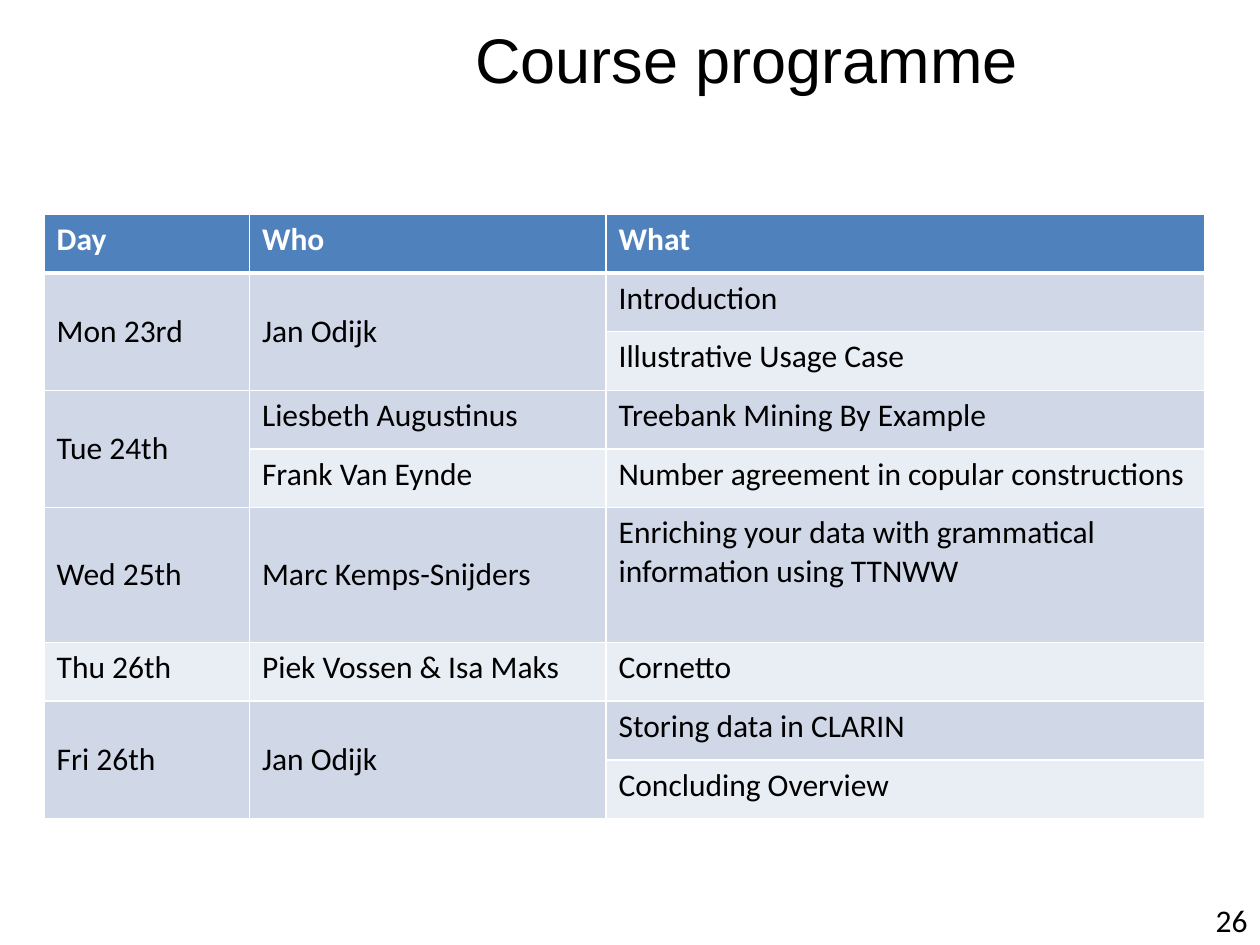
from dataclasses import dataclass

from lxml import etree
from pptx import Presentation
from pptx import util as u
from pptx.dml.color import RGBColor
from pptx.enum import text
from pptx.oxml import ns


@dataclass(frozen=True)
class Theme:
    ink: str = "000000"
    paper: str = "FFFFFF"
    header: str = "4F81BD"
    bands: tuple = ("E9EDF4", "D0D8E8")
    title_font: str = "Arial"
    body_font: str = "Calibri"
    title_size: int = 36
    body_size: int = 18
    rule: int = 1
    header_rule: int = 3


HEADINGS = ("Day", "Who", "What")
PROGRAMME = (
    ("Mon 23rd", "Jan Odijk", "Introduction"),
    (None, None, "Illustrative Usage Case"),
    ("Tue 24th", "Liesbeth Augustinus", "Treebank Mining By Example"),
    (None, "Frank Van Eynde", "Number agreement in copular constructions"),
    ("Wed 25th", "Marc Kemps-Snijders",
     "Enriching your data with grammatical information using TTNWW"),
    ("Thu 26th", "Piek Vossen & Isa Maks", "Cornetto"),
    ("Fri 26th", "Jan Odijk", "Storing data in CLARIN"),
    (None, None, "Concluding Overview"),
)
WEDNESDAY = 5
MIDDLE = text.MSO_ANCHOR.MIDDLE


class Deck:
    COLUMNS, ROWS = 100, 75

    def __init__(self, theme):
        self.theme = theme
        self.prs = Presentation()
        self.prs.slide_width, self.prs.slide_height = u.Inches(10), u.Inches(7.5)
        self.s = self.prs.slides.add_slide(self.prs.slide_layouts[6])

    def x(self, columns):
        return round(self.prs.slide_width * columns / self.COLUMNS)

    def y(self, rows):
        return round(self.prs.slide_height * rows / self.ROWS)

    def box(self, left, top, width, height):
        return self.x(left), self.y(top), self.x(width), self.y(height)

    def font(self, p, name, size, color, bold=False):
        p.font.name, p.font.size, p.font.bold = name, u.Pt(size), bold
        p.font.color.rgb = RGBColor.from_string(color)

    def label(self, words, area, name, size, align, anchor=text.MSO_ANCHOR.TOP):
        tf = self.s.shapes.add_textbox(*self.box(*area)).text_frame
        tf.word_wrap, tf.vertical_anchor = True, anchor
        p = tf.paragraphs[0]
        p.text, p.alignment = words, align
        self.font(p, name, size, self.theme.ink)

    def borders(self, cell, **widths):
        tc_pr = cell._tc.get_or_add_tcPr()
        for side in "LRTB":
            width = u.Pt(widths.get(side, self.theme.rule))
            ln = etree.SubElement(tc_pr, ns.qn(f"a:ln{side}"), w=str(width))
            fill = etree.SubElement(ln, ns.qn("a:solidFill"))
            etree.SubElement(fill, ns.qn("a:srgbClr"), val=self.theme.paper)

    def cell(self, cell, words, row):
        t = self.theme
        head = row == 0
        edge = {0: {"B": t.header_rule}, 1: {"T": t.header_rule}}.get(row, {})
        self.borders(cell, **edge)
        cell.fill.solid()
        cell.fill.fore_color.rgb = RGBColor.from_string(
            t.header if head else t.bands[row % 2])
        p = cell.text_frame.paragraphs[0]
        p.text = words or ""
        self.font(p, t.body_font, t.body_size, t.paper if head else t.ink, head)

    def table(self, rows, area, widths, heights):
        frame = self.s.shapes.add_table(len(rows), len(widths), *self.box(*area))
        table = frame.table
        for column, width in zip(table.columns, widths):
            column.width = self.x(width)
        for row, height in zip(table.rows, heights):
            row.height = self.y(height)
        for i, row in enumerate(rows):
            for j, words in enumerate(row):
                self.cell(table.cell(i, j), words, i)
                if words is None:
                    origin = table.cell(i - 1, j)
                    origin.merge(table.cell(i, j))
                    origin.vertical_anchor = MIDDLE
        return table


def main():
    theme = Theme()
    deck = Deck(theme)
    deck.label("Course programme", (18.5, 0, 81.5, 9.2), theme.title_font,
               theme.title_size, text.PP_ALIGN.CENTER, MIDDLE)
    deck.label("26", (89.4, 71, 10.6, 4), theme.body_font,
               theme.body_size, text.PP_ALIGN.RIGHT)
    rows = (HEADINGS, *PROGRAMME)
    heights = [10.7 if i == WEDNESDAY else 4.66 for i in range(len(rows))]
    widths = (16.3, 28.3, 47.5)
    table = deck.table(rows, (3.5, 17, sum(widths), sum(heights)), widths, heights)
    for column in (0, 1):
        table.cell(WEDNESDAY, column).vertical_anchor = MIDDLE
    deck.prs.save("out.pptx")


if __name__ == "__main__":
    main()
